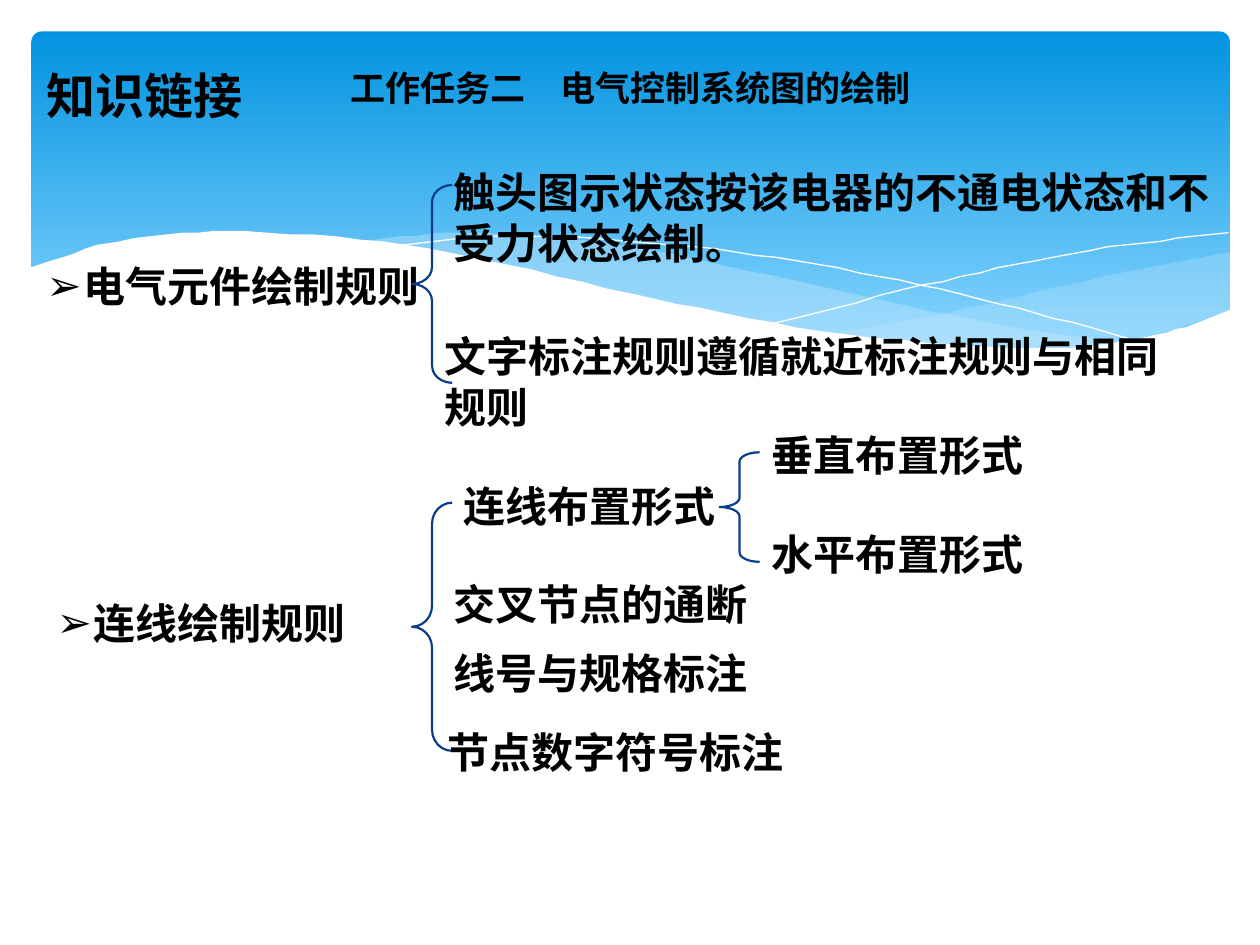
from lxml import etree
from pptx import Presentation
from pptx.dml.color import RGBColor
from pptx.enum.shapes import MSO_SHAPE
from pptx.enum.text import MSO_ANCHOR, MSO_AUTO_SIZE, PP_ALIGN
from pptx.oxml.ns import qn
from pptx.util import Pt

ROUNDED = MSO_SHAPE.ROUNDED_RECTANGLE
BRACE = MSO_SHAPE.LEFT_BRACE
MIDDLE = MSO_ANCHOR.MIDDLE
GROW, FIXED = MSO_AUTO_SIZE.SHAPE_TO_FIT_TEXT, MSO_AUTO_SIZE.NONE
LEFT, CENTER = PP_ALIGN.LEFT, PP_ALIGN.CENTER

COLORS = {"sky": "0293E0", "pale_sky": "83D3FE", "mist": "C6E7FC",
          "white": "FFFFFF", "text": "000000", "brace": "073E87"}
BODY_FONT, TITLE_FONT = "Cabin", "Noto Sans CJK SC"

BULLET_INDENT = 21
ONE_LINE, TWO_LINES = 36, 65.5
BRACE_WIDTH, BRACE_CURL = 23, 13.3
RULE_BRACE_LEFT, LAYOUT_BRACE_LEFT = 235.4, 411.1
DETAIL_LEFT, LAYOUT_LEFT = 252, 433.6
CURVE_STEPS = 8


def rgb(name):
    return RGBColor.from_string(COLORS[name])


def smooth(knots):
    """Return points on a cubic curve y(x) that passes through the knots."""
    last = len(knots) - 1
    slopes = []
    for i in range(last + 1):
        (x0, y0), (x1, y1) = knots[max(i - 1, 0)], knots[min(i + 1, last)]
        slopes.append((y1 - y0) / (x1 - x0))
    points = [knots[0]]
    for i in range(last):
        (x0, y0), (x1, y1) = knots[i], knots[i + 1]
        run = x1 - x0
        for step in range(1, CURVE_STEPS + 1):
            t = step / CURVE_STEPS
            ease = t * t * (3 - 2 * t)
            bend = t * (1 - t) * ((1 - t) * slopes[i] - t * slopes[i + 1])
            points.append((x0 + run * t, y0 + (y1 - y0) * ease + run * bend))
    return points


def add_outline(slide, points, closed):
    builder = slide.shapes.build_freeform(*points[0], scale=Pt(1))
    builder.add_line_segments(points[1:], close=closed)
    outline = builder.convert_to_shape()
    outline.shadow.inherit = False
    return outline


def add_wave(slide, crest, base, color, opacity=100):
    """Fill the area between two smooth edges, both given left to right."""
    wave = add_outline(slide, smooth(crest) + smooth(base)[::-1], closed=True)
    wave.line.fill.background()
    wave.fill.solid()
    wave.fill.fore_color.rgb = rgb(color)
    if opacity < 100:
        tint = wave.fill._xPr.find(".//" + qn("a:srgbClr"))
        etree.SubElement(tint, qn("a:alpha"), val=str(opacity * 1000))


def add_hairline(slide, knots):
    hairline = add_outline(slide, smooth(knots), closed=False)
    hairline.fill.background()
    hairline.line.color.rgb = rgb("white")
    hairline.line.width = Pt(0)


def add_sky(slide):
    sky = slide.shapes.add_shape(ROUNDED, Pt(18), Pt(18), Pt(684.7), Pt(194.4))
    sky.shadow.inherit = False
    sky.adjustments[0] = 0.03
    sky.line.fill.background()
    sky.fill.gradient()
    sky.fill.gradient_angle = 270
    stops = zip(sky.fill.gradient_stops, ("sky", "pale_sky"), (0, 0.9))
    for stop, color, position in stops:
        stop.color.rgb = rgb(color)
        stop.position = position


def add_background(slide):
    """Layer the sky, two translucent waves, two hairlines and a white wave."""
    add_sky(slide)
    add_wave(slide, color="mist", opacity=29,
             crest=[(476, 191), (542, 178.6), (620, 160.6), (702.7, 144)],
             base=[(476, 191), (518, 196), (578, 200), (640, 196), (702.7, 178)])
    add_wave(slide, color="mist", opacity=40,
             crest=[(206, 137.5), (266, 133), (352, 139.7), (453, 160),
                    (558, 183), (643, 196.6)],
             base=[(206, 137.5), (323, 160), (433, 183.6), (520, 197),
                   (590, 200), (643, 196.6)])
    add_hairline(slide, [(222.5, 140.4), (290, 134.6), (384, 139.7),
                         (479, 153.4), (572, 173.5), (653, 196)])
    add_hairline(slide, [(441.4, 185), (538.6, 160.6), (623.5, 143), (702, 133)])
    add_wave(slide, color="white",
             crest=[(16.6, 153.4), (68, 137.5), (140, 132.5), (245, 142),
                    (362, 168), (467, 188.6), (593, 199.4), (662, 191),
                    (703.4, 177)],
             base=[(16.6, 237), (703.4, 237)])


def add_text(slide, text, left, top, width, height=ONE_LINE, size=24,
             font=BODY_FONT, align=LEFT, auto_size=GROW):
    box = slide.shapes.add_textbox(Pt(left), Pt(top), Pt(width), Pt(height))
    frame = box.text_frame
    frame_format = {"word_wrap": True, "vertical_anchor": MIDDLE,
                    "auto_size": auto_size}
    for name, value in frame_format.items():
        setattr(frame, name, value)
    paragraph = frame.paragraphs[0]
    paragraph.alignment = align
    run = paragraph.add_run()
    run.text = text
    for name, value in {"size": Pt(size), "name": font, "bold": True}.items():
        setattr(run.font, name, value)
    run.font.color.rgb = rgb("text")
    latin = run.font._element.find(qn("a:latin"))
    latin.addnext(latin.makeelement(qn("a:ea"), {"typeface": font}))
    return frame


def add_rule(slide, text, left, top, width):
    """Add a bulleted heading with a hanging indent."""
    frame = add_text(slide, text, left, top, width)
    frame.margin_right = 0
    properties = frame.paragraphs[0]._p.get_or_add_pPr()
    properties.set("marL", str(Pt(BULLET_INDENT)))
    properties.set("indent", str(-Pt(BULLET_INDENT)))
    etree.SubElement(properties, qn("a:buFont"), typeface=BODY_FONT)
    etree.SubElement(properties, qn("a:buChar"), char="➢")


def add_brace(slide, left, top, height):
    brace = slide.shapes.add_shape(BRACE, Pt(left), Pt(top),
                                   Pt(BRACE_WIDTH), Pt(height))
    brace.shadow.inherit = False
    brace.adjustments[0] = round(BRACE_CURL / BRACE_WIDTH, 2)
    brace.fill.background()
    brace.line.color.rgb = rgb("brace")
    brace.line.width = Pt(1.25)
    return brace


def add_headings(slide):
    add_text(slide, "知识链接", 19.4, 33.8, 187.2, 41, size=28)
    add_text(slide, "工作任务二　电气控制系统图的绘制", 14.4, 25.9, 691.9, 48.2,
             size=20, font=TITLE_FONT, align=CENTER, auto_size=FIXED)


def add_component_rules(slide):
    add_rule(slide, "电气元件绘制规则", 19.4, 145.4, 226.8)
    add_brace(slide, RULE_BRACE_LEFT, 105.8, 113).adjustments[0] = 0.42
    add_text(slide, "触头图示状态按该电器的不通电状态和不受力状态绘制。",
             DETAIL_LEFT, 91.4, 447.8, TWO_LINES)
    add_text(slide, "文字标注规则遵循就近标注规则与相同规则",
             246.7, 185, 436.3, TWO_LINES)


def add_wiring_rules(slide):
    add_rule(slide, "连线绘制规则", 25.2, 337.7, 215.3)
    add_brace(slide, RULE_BRACE_LEFT, 287.3, 141.8).adjustments[0] = 0.52
    wiring_details = [("连线布置形式", 257.8, 270.7, 164.2),
                      ("交叉节点的通断", DETAIL_LEFT, 326.9, 187.2),
                      ("线号与规格标注", DETAIL_LEFT, 366.5, 436.3),
                      ("节点数字符号标注", 248.4, 411.8, 213.8)]
    for detail in wiring_details:
        add_text(slide, *detail)
    add_brace(slide, LAYOUT_BRACE_LEFT, 258.5, 62.6).adjustments[0] = 0.23
    for row, layout in enumerate(("垂直布置形式", "水平布置形式")):
        add_text(slide, layout, LAYOUT_LEFT, 242 + row * 56.4, 164.2)


def main():
    deck = Presentation()
    deck.slide_width, deck.slide_height = Pt(720), Pt(540)
    slide = deck.slides.add_slide(deck.slide_layouts[6])
    for add_part in (add_background, add_headings,
                     add_component_rules, add_wiring_rules):
        add_part(slide)
    deck.save("out.pptx")


if __name__ == "__main__":
    main()
